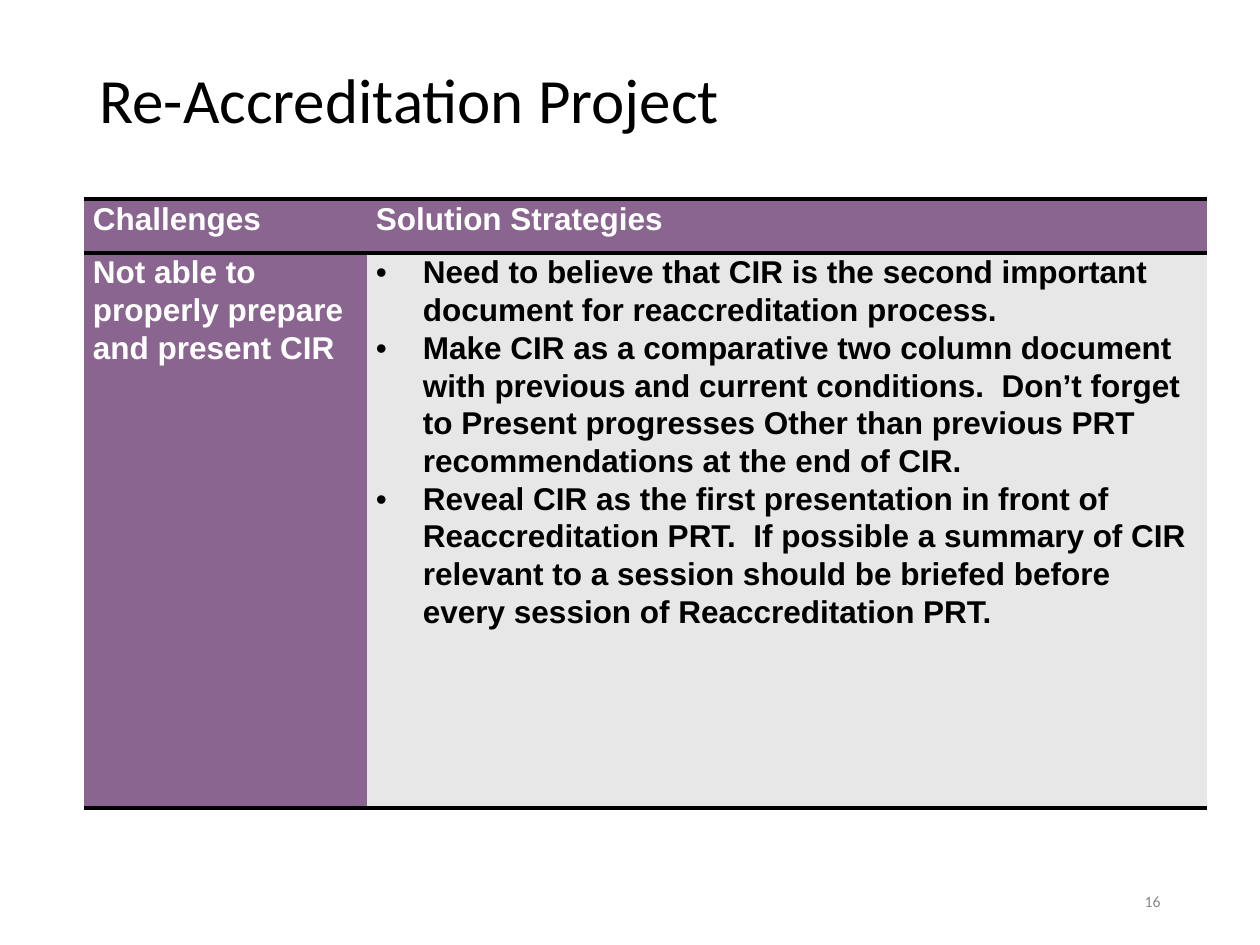
from lxml.etree import SubElement
from pptx import Presentation
from pptx.dml.color import RGBColor
from pptx.enum.text import MSO_ANCHOR as Anchor, MSO_AUTO_SIZE as AutoSize, PP_ALIGN as Align
from pptx.oxml import parse_xml
from pptx.oxml.ns import nsdecls, qn
from pptx.util import Emu, Pt

PX = 914400 / 126
BLACK = RGBColor(0x00, 0x00, 0x00)
WHITE = RGBColor(0xFF, 0xFF, 0xFF)
GREY = RGBColor(0x89, 0x89, 0x89)
PURPLE = RGBColor(0x89, 0x65, 0x8F)
PALE = RGBColor(0xE7, 0xE7, 0xE7)

CHALLENGE = "Not able to properly prepare and present CIR"
STRATEGIES = [
    "Need to believe that CIR is the second important document for reaccreditation process.",
    "Make CIR as a comparative two column document with previous and current conditions.  "
    "Don’t forget to Present progresses Other than previous PRT recommendations at the end of CIR.",
    "Reveal CIR as the first presentation in front of  Reaccreditation PRT.  If possible a summary "
    "of CIR relevant to a session should be briefed before every session of Reaccreditation PRT.",
]


def px(length):
    return Emu(round(length * PX))


class SlideBuilder:
    heading_font = "Calibri"
    table_font = "Arial"
    line_spacing = 1.07
    indent = 47
    cell_margin = 9

    def __init__(self, slide):
        self.slide = slide

    def add_text(self, paragraph, text, font, size, color, bold=False):
        run = paragraph.add_run()
        run.text = text
        run.font.name = font
        run.font.size = Pt(size)
        run.font.bold = bold
        run.font.color.rgb = color

    def title(self, text, left, top, width, height):
        title = self.slide.shapes.title
        title.left, title.top, title.width, title.height = map(px, (left, top, width, height))
        frame = title.text_frame
        frame.auto_size = AutoSize.NONE
        frame.vertical_anchor = Anchor.MIDDLE
        heading = frame.paragraphs[0]
        heading.alignment = Align.LEFT
        heading.line_spacing = self.line_spacing
        self.add_text(heading, text, self.heading_font, 36, BLACK)

    def page_number(self, text, left, top, width, height):
        frame = self.slide.shapes.add_textbox(*map(px, (left, top, width, height))).text_frame
        frame.word_wrap = True
        frame.vertical_anchor = Anchor.MIDDLE
        number = frame.paragraphs[0]
        number.alignment = Align.RIGHT
        self.add_text(number, text, self.heading_font, 9, GREY)

    def table(self, left, top, columns, rows):
        frame = self.slide.shapes.add_table(
            len(rows), len(columns), *map(px, (left, top, sum(columns), sum(rows))))
        table = frame.table
        table.horz_banding = False
        for column, width in zip(table.columns, columns):
            column.width = px(width)
        for row, height in zip(table.rows, rows):
            row.height = px(height)
        return table

    def cell(self, cell, texts, fill, color, bulleted=False):
        cell.margin_left = cell.margin_right = px(self.cell_margin)
        cell.margin_top = cell.margin_bottom = 0
        cell.fill.solid()
        cell.fill.fore_color.rgb = fill
        self.borders(cell)
        frame = cell.text_frame
        for index, text in enumerate(texts):
            paragraph = frame.add_paragraph() if index else frame.paragraphs[0]
            paragraph.line_spacing = self.line_spacing
            if bulleted:
                self.bullet(paragraph)
            self.add_text(paragraph, text, self.table_font, 18, color, bold=True)

    def bullet(self, paragraph):
        properties = paragraph._p.get_or_add_pPr()
        properties.set("marL", str(px(self.indent)))
        properties.set("indent", str(-px(self.indent)))
        SubElement(properties, qn("a:buFont"), typeface=self.table_font)
        SubElement(properties, qn("a:buChar"), char="•")

    def borders(self, cell):
        hidden = "<a:noFill/>"
        ruled = f'<a:solidFill><a:srgbClr val="{BLACK}"/></a:solidFill>'
        sides = {"lnL": hidden, "lnR": hidden, "lnT": ruled, "lnB": ruled}
        properties = cell._tc.get_or_add_tcPr()
        for index, (side, paint) in enumerate(sides.items()):
            line = f'<a:{side} {nsdecls("a")} w="{Pt(2)}">{paint}</a:{side}>'
            properties.insert(index, parse_xml(line))


def main():
    deck = Presentation()
    deck.slide_width, deck.slide_height = px(1260), px(945)
    builder = SlideBuilder(deck.slides.add_slide(deck.slide_layouts[5]))
    builder.title("Re-Accreditation Project", 87, 23, 1086, 146)
    builder.page_number("16", 890, 876, 283, 50)
    table = builder.table(84, 199, columns=[283, 840], rows=[54, 555])
    builder.cell(table.cell(0, 0), ["Challenges"], PURPLE, WHITE)
    builder.cell(table.cell(0, 1), ["Solution Strategies"], PURPLE, WHITE)
    builder.cell(table.cell(1, 0), [CHALLENGE], PURPLE, WHITE)
    builder.cell(table.cell(1, 1), STRATEGIES, PALE, BLACK, bulleted=True)
    deck.save("out.pptx")


if __name__ == "__main__":
    main()
